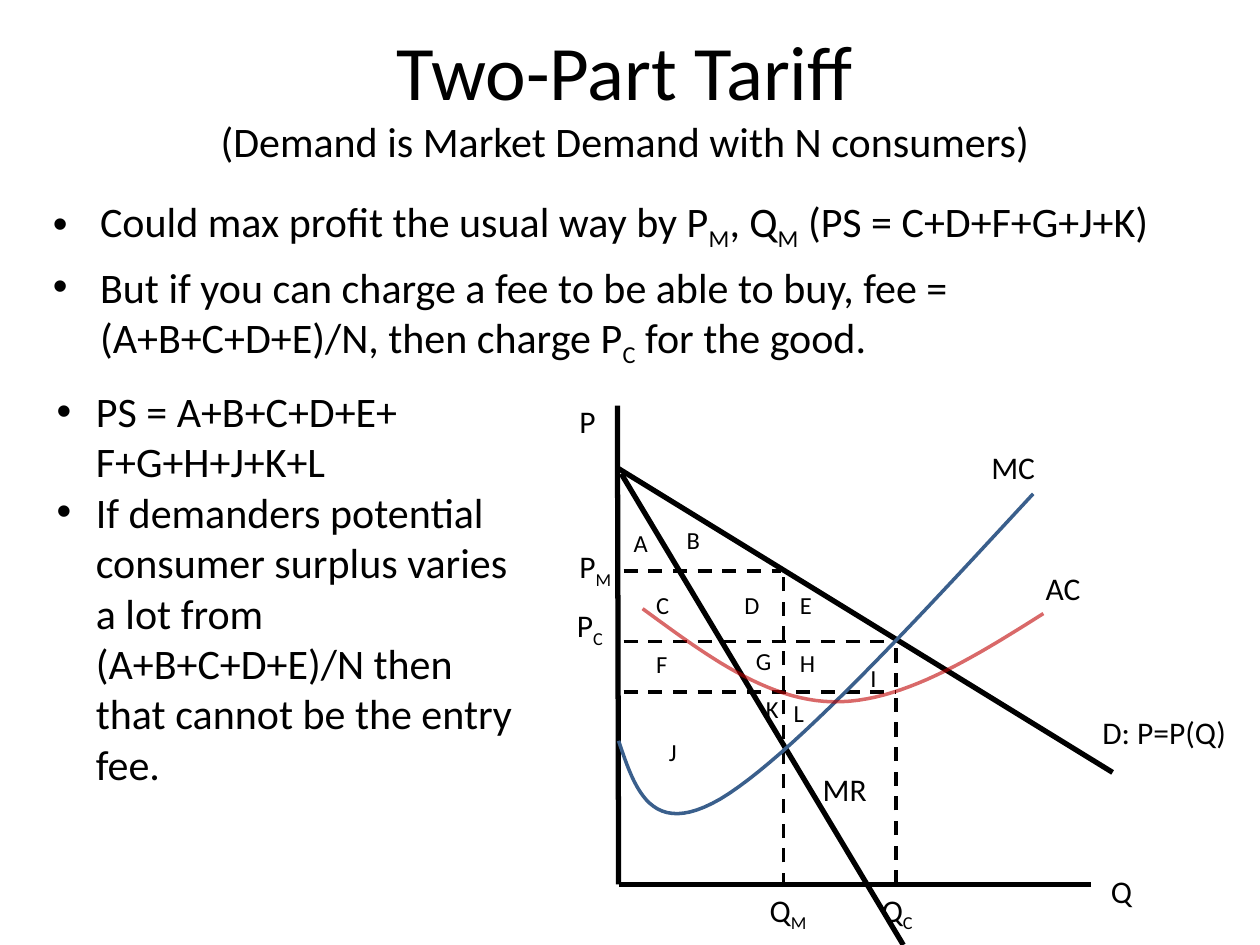
from pptx import Presentation
from pptx.dml.color import RGBColor
from pptx.enum.dml import MSO_LINE_DASH_STYLE as Dash
from pptx.enum.shapes import MSO_CONNECTOR as Conn
from pptx.enum.text import MSO_ANCHOR as Anchor, PP_ALIGN as Align
from pptx.oxml.ns import qn
from pptx.util import Pt
from lxml.etree import SubElement as Sub

BLACK = RGBColor(0, 0, 0)
BLUE = RGBColor(0x3A, 0x5F, 0x8C)
RED = RGBColor(0xC0, 0, 0)
FONT = "Calibri"

TITLE = [("Two-Part Tariff", 44), ("(Demand is Market Demand with N consumers)", 24)]
BODY = [
    "Could max profit the usual way by P_M_, Q_M_ (PS = C+D+F+G+J+K)",
    "But if you can charge a fee to be able to buy, fee = (A+B+C+D+E)/N, then charge P_C_ for the good.",
]
NOTES = [
    "PS = A+B+C+D+E+ F+G+H+J+K+L",
    "If demanders potential consumer surplus varies a lot from (A+B+C+D+E)/N then that cannot be the entry fee.",
]
SOLID = [
    (352.8, 231.8, 353.5, 505.4),
    (623.5, 505.4, 353.5, 505.4),
    (353.5, 267.8, 635.8, 441.4),
    (355, 270.7, 516.2, 540),
]
DASHED = [
    (511.9, 505.4, 511.9, 365.8),
    (447.8, 506.9, 447.8, 325.4),
    (356.4, 326.2, 446.4, 326.2),
    (356.4, 395.3, 511.9, 395.3),
    (356.4, 366.5, 511.9, 366.5),
]
CURVES = [
    (BLUE, 100, [(353.5, 423.4), (362.9, 451.4), (372.2, 479.5), (411.8, 456.5),
                 (451.4, 432.7), (520.6, 357.8), (590.4, 282.2)]),
    (RED, 59, [(367.2, 347.8), (402.5, 373.7), (437.8, 400.3), (475.9, 401),
               (514.1, 401.8), (555.1, 376.6), (596.2, 350.6)]),
]
NAMES = [
    ("MR", 463, 436.3, 46.8), ("D: P=P(Q)", 622.8, 403.9, 86.4),
    ("P", 324, 226.1, 23.8), ("MC", 559.4, 252.7, 44.6),
    ("AC", 590.4, 321.8, 38.9), ("Q", 627.8, 494.6, 26.6),
    ("P_M_", 324, 308.9, 34.6), ("P_C_", 322.6, 342.7, 30.2),
    ("Q_M_", 432.7, 505.4, 38.9), ("Q_C_", 496.8, 505.4, 38.9),
]
AREAS = [
    ("A", 355, 298.1, 23), ("B", 385.2, 296.6, 22.3), ("C", 367.9, 333.4, 22.3),
    ("D", 418.3, 333.4, 23), ("E", 450, 333.4, 21.6), ("F", 367.9, 367.2, 20.9),
    ("G", 424.8, 365.8, 23.8), ("H", 450, 366.5, 23), ("I", 490.3, 375.1, 18),
    ("J", 375.1, 417.6, 18.7), ("K", 430.6, 393.1, 21.6), ("L", 446.4, 395.3, 20.2),
]

deck = Presentation()
deck.slide_width, deck.slide_height = Pt(720), Pt(540)
slide = deck.slides.add_slide(deck.slide_layouts[1])
shapes = slide.shapes


def place(shape, x, y, w, h):
    shape.left, shape.top, shape.width, shape.height = Pt(x), Pt(y), Pt(w), Pt(h)


def style(font, size):
    font.name, font.size, font.color.rgb = FONT, Pt(size), BLACK


def write(frame, lines, size):
    for i, line in enumerate(lines):
        para = frame.paragraphs[0] if i == 0 else frame.add_paragraph()
        style(para.font, size)
        for j, part in enumerate(line.split("_")):
            if part:
                run = para.add_run()
                run.text = part
                if j % 2:
                    run.font._element.set("baseline", "-25000")


def bullet(para, indent):
    prop = para._p.get_or_add_pPr()
    prop.set("marL", str(Pt(indent)))
    prop.set("indent", str(-Pt(indent)))
    mark = prop.makeelement(qn("a:buFont"), {"typeface": "Arial"})
    char = prop.makeelement(qn("a:buChar"), {"char": "•"})
    prop.insert_element_before(mark, "a:tabLst", "a:defRPr", "a:extLst")
    prop.insert_element_before(char, "a:tabLst", "a:defRPr", "a:extLst")


def label(text, x, y, w, h, size):
    box = shapes.add_textbox(Pt(x), Pt(y), Pt(w), Pt(h))
    box.text_frame.word_wrap = False
    write(box.text_frame, [text], size)


def rule(ends, width, dash=None):
    line = shapes.add_connector(Conn.STRAIGHT, *map(Pt, ends))
    line.line.color.rgb, line.line.width = BLACK, Pt(width)
    if dash:
        line.line.dash_style = dash
    Sub(line._element.spPr, qn("a:effectLst"))


def bezier(knots, steps=24):
    for k in range(0, len(knots) - 1, 3):
        a, b, c, d = knots[k:k + 4]
        for i in range(1, steps + 1):
            t = i / steps
            u = 1 - t
            yield tuple(Pt(u**3 * p + 3 * u * u * t * q + 3 * u * t * t * r + t**3 * s)
                        for p, q, r, s in zip(a, b, c, d))


def curve(color, alpha, knots):
    pen = shapes.build_freeform(*map(Pt, knots[0]))
    pen.add_line_segments(list(bezier(knots)), close=False)
    shape = pen.convert_to_shape()
    shape.shadow.inherit = False
    shape.fill.background()
    shape.line.color.rgb, shape.line.width = color, Pt(2)
    if alpha < 100:
        tint = shape.line._ln.find(".//" + qn("a:srgbClr"))
        Sub(tint, qn("a:alpha"), val=str(alpha * 1000))


title = shapes.title
place(title, 12.2, 12.2, 689.8, 84.2)
title.text_frame.vertical_anchor = Anchor.MIDDLE
para = title.text_frame.paragraphs[0]
para.alignment = Align.CENTER
for i, (text, size) in enumerate(TITLE):
    if i:
        para.add_line_break()
    run = para.add_run()
    run.text = text
    style(run.font, size)

body = slide.placeholders[1]
place(body, 23, 108, 666, 132.5)
write(body.text_frame, BODY, 24)

for ends in SOLID:
    rule(ends, 3)
for ends in DASHED:
    rule(ends, 2, Dash.DASH)
for item in CURVES:
    curve(*item)
for name in NAMES:
    label(*name, 28.8, 18)
for area in AREAS:
    label(*area, 24.5, 14)

notes = shapes.add_textbox(Pt(25.2), Pt(216.7), Pt(275), Pt(269.3))
notes.text_frame.word_wrap = True
write(notes.text_frame, NOTES, 24)
for para in notes.text_frame.paragraphs:
    bullet(para, 22.5)

deck.save("out.pptx")
